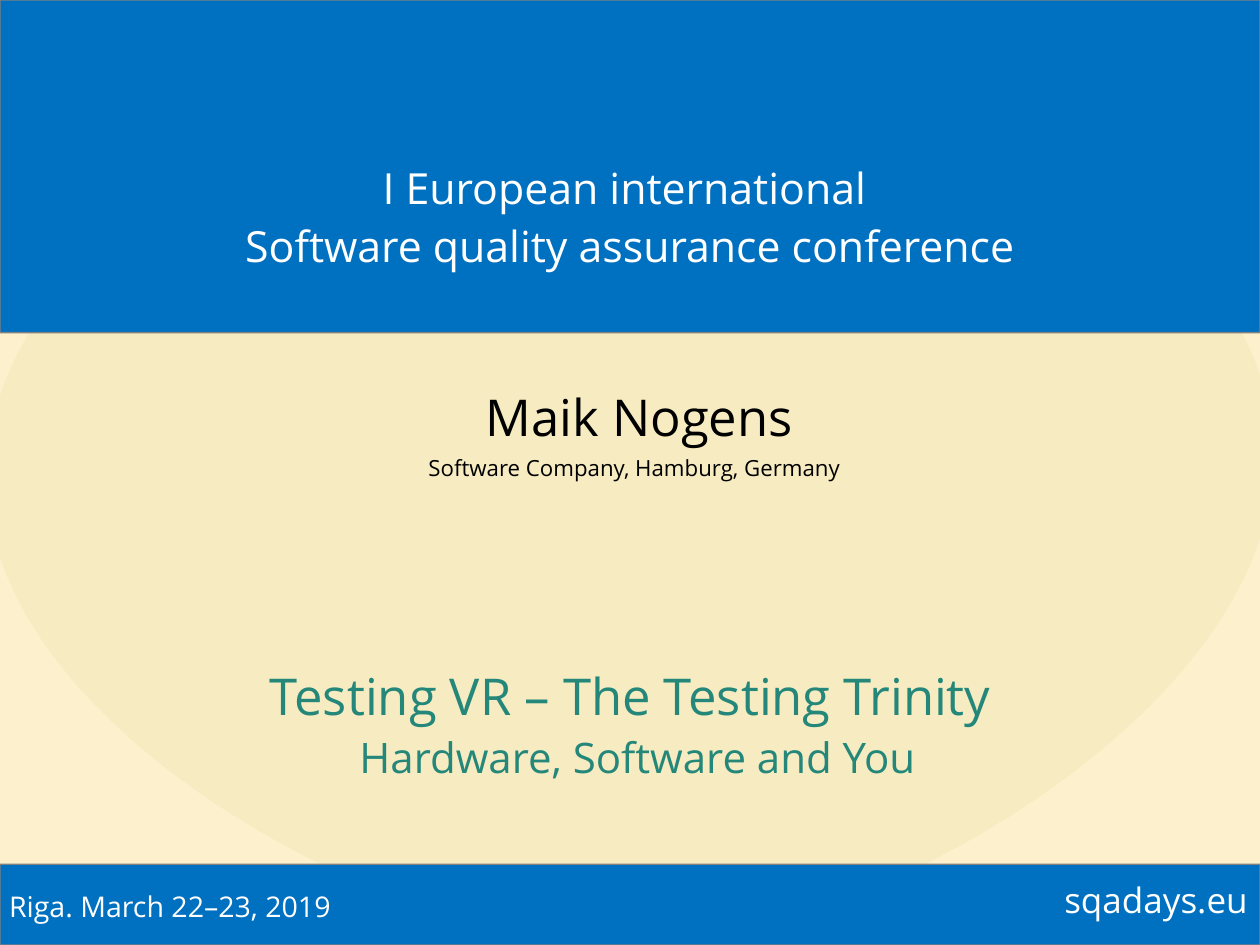
from lxml.etree import SubElement
from pptx import Presentation
from pptx.dml.color import RGBColor
from pptx.enum.shapes import MSO_SHAPE
from pptx.enum.text import MSO_ANCHOR, MSO_AUTO_SIZE, PP_ALIGN
from pptx.oxml.ns import qn
from pptx.util import Inches, Pt

CREAM = RGBColor(0xFC, 0xF1, 0xCC)
OLIVE = RGBColor(0xA5, 0x8E, 0x1A)
BLUE = RGBColor(0x00, 0x70, 0xC0)
GRAY = RGBColor(0x80, 0x80, 0x80)
TEAL = RGBColor(0x24, 0x87, 0x7A)
WHITE = RGBColor(0xFF, 0xFF, 0xFF)
BLACK = RGBColor(0x00, 0x00, 0x00)

OVAL_START = (-0.11, 3.78)
OVAL_CURVES = [
    ((-0.11, 5.86), (3.32, 7.57), (5.03, 7.54)),
    ((6.73, 7.51), (10.11, 5.71), (10.11, 3.62)),
    ((10.11, 1.54), (6.73, -0.03), (5.03, 0)),
    ((3.32, 0.03), (-0.11, 1.7), (-0.11, 3.78)),
]
CURVE_STEPS = 32


def set_all(target, values):
    for name, value in values.items():
        setattr(target, name, value)


def place(shape, left, top, width, height):
    set_all(shape, {
        "left": Inches(left), "top": Inches(top),
        "width": Inches(width), "height": Inches(height),
    })


def curve_points(start, curves):
    points = []
    for first, second, end in curves:
        for step in range(1, CURVE_STEPS + 1):
            t = step / CURVE_STEPS
            weights = ((1 - t) ** 3, 3 * t * (1 - t) ** 2, 3 * t * t * (1 - t), t ** 3)
            anchors = (start, first, second, end)
            points.append(tuple(
                Inches(sum(w * anchor[axis] for w, anchor in zip(weights, anchors)))
                for axis in (0, 1)
            ))
        start = end
    return points


def add_oval(slide):
    builder = slide.shapes.build_freeform(*(Inches(v) for v in OVAL_START))
    builder.add_line_segments(curve_points(OVAL_START, OVAL_CURVES), close=True)
    oval = builder.convert_to_shape()
    oval.shadow.inherit = False
    oval.fill.solid()
    oval.fill.fore_color.rgb = OLIVE
    oval.line.fill.background()
    color = oval.element.spPr.find(f"{qn('a:solidFill')}/{qn('a:srgbClr')}")
    SubElement(color, qn("a:alpha"), val="6000")


def add_band(slide, top, height, rounding):
    band = slide.shapes.add_shape(
        MSO_SHAPE.ROUNDED_RECTANGLE, 0, Inches(top), Inches(10), Inches(height))
    band.adjustments[0] = rounding
    band.shadow.inherit = False
    band.fill.solid()
    band.fill.fore_color.rgb = BLUE
    band.line.color.rgb = GRAY
    band.line.width = Pt(0.75)


def format_frame(frame, wrap):
    set_all(frame, {
        "margin_left": Inches(0.09), "margin_right": Inches(0.09),
        "margin_top": Inches(0.04), "margin_bottom": Inches(0.04),
        "word_wrap": wrap, "auto_size": MSO_AUTO_SIZE.NONE,
        "vertical_anchor": MSO_ANCHOR.TOP,
    })


def format_paragraph(paragraph):
    set_all(paragraph, {"alignment": PP_ALIGN.CENTER, "line_spacing": 1.13})


def add_run(paragraph, text, size, color):
    run = paragraph.add_run()
    run.text = text
    set_all(run.font, {"name": "Open Sans", "size": Pt(size)})
    run.font.color.rgb = color


def add_label(slide, box, lines, size, color, wrap=False):
    label = slide.shapes.add_textbox(*(Inches(v) for v in box))
    frame = label.text_frame
    format_frame(frame, wrap)
    for index, line in enumerate(lines):
        paragraph = frame.add_paragraph() if index else frame.paragraphs[0]
        format_paragraph(paragraph)
        add_run(paragraph, line, size, color)


def add_talk_title(slide):
    talk = slide.shapes.title
    talk.element.getparent().append(talk.element)
    place(talk, 0.41, 5.17, 9.3, 1.13)
    format_frame(talk.text_frame, True)
    paragraph = talk.text_frame.paragraphs[0]
    format_paragraph(paragraph)
    add_run(paragraph, "Testing VR – The Testing Trinity ", 29, TEAL)
    paragraph.add_line_break()
    add_run(paragraph, "Hardware, Software and You", 24, TEAL)


def main():
    deck = Presentation()
    set_all(deck, {"slide_width": Inches(10), "slide_height": Inches(7.5)})
    slide = deck.slides.add_slide(deck.slide_layouts[5])
    slide.background.fill.solid()
    slide.background.fill.fore_color.rgb = CREAM

    add_oval(slide)
    add_band(slide, 0, 2.64, 0.001)
    add_band(slide, 6.86, 0.64, 0.002)
    add_label(slide, (0, 6.98, 2.7, 0.4), ["Riga. March 22–23, 2019"], 16.3, WHITE)
    add_label(slide, (0.43, 2.96, 9.29, 0.64), ["Maik Nogens"], 29, BLACK, wrap=True)
    add_label(slide, (0.43, 3.54, 9.21, 0.33),
              ["Software Company, Hamburg, Germany"], 12.7, BLACK, wrap=True)
    add_talk_title(slide)
    add_label(slide, (1.84, 1.19, 6.32, 0.97),
              ["I European international ", "Software quality assurance conference"],
              24.5, WHITE)
    add_label(slide, (8.35, 6.89, 1.65, 0.47), ["sqadays.eu"], 20, WHITE)
    deck.save("out.pptx")


if __name__ == "__main__":
    main()
